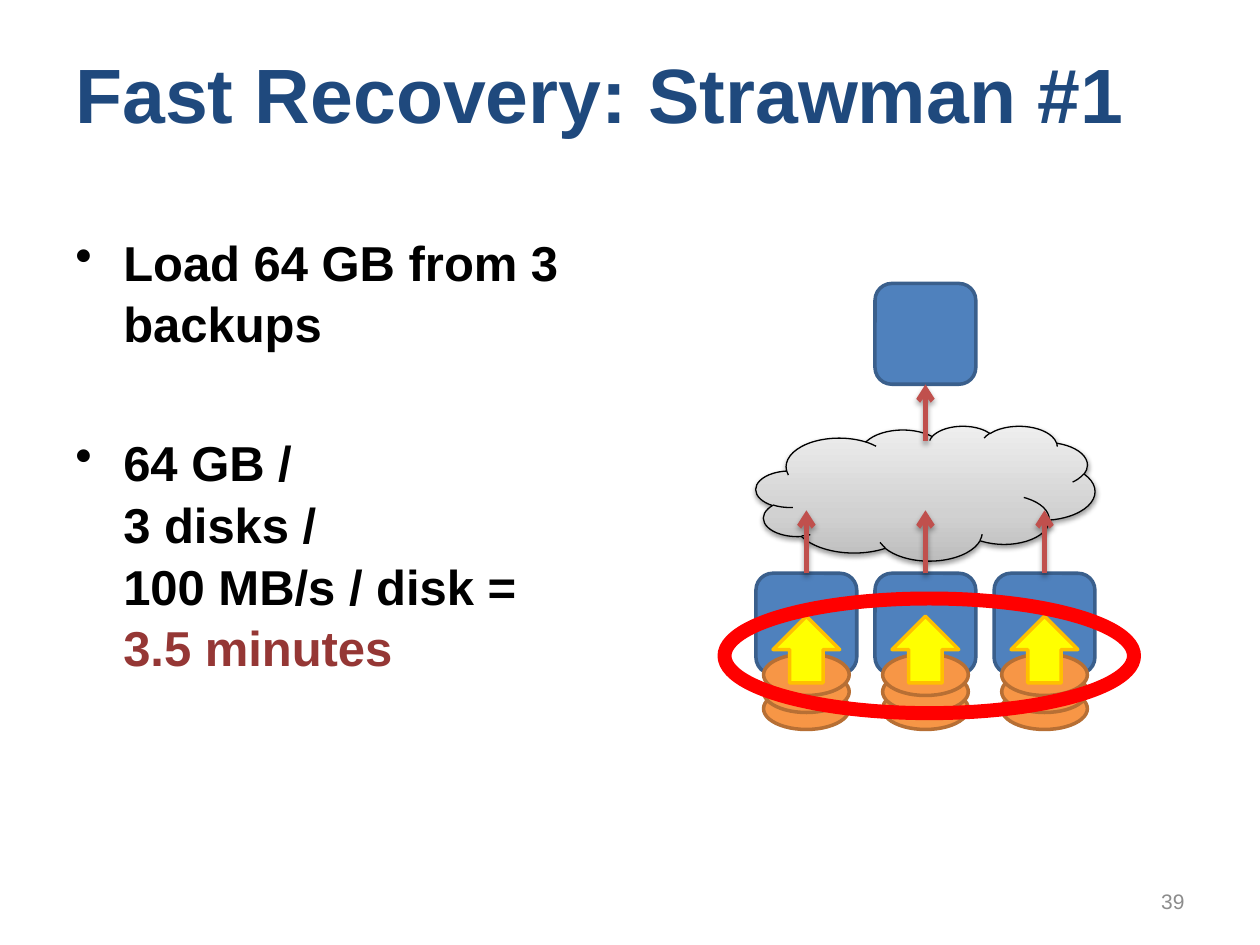
from dataclasses import dataclass
from typing import Optional

from lxml import etree
from pptx import Presentation
from pptx.dml.color import RGBColor
from pptx.enum.shapes import MSO_CONNECTOR, MSO_SHAPE
from pptx.enum.text import MSO_ANCHOR, PP_ALIGN
from pptx.oxml import parse_xml
from pptx.oxml.ns import qn
from pptx.util import Inches, Pt

ROUND_RECT = MSO_SHAPE.ROUNDED_RECTANGLE
OVAL = MSO_SHAPE.OVAL
UP_ARROW = MSO_SHAPE.RIGHT_ARROW
CLOUD = MSO_SHAPE.CLOUD
STRAIGHT = MSO_CONNECTOR.STRAIGHT
MIDDLE = MSO_ANCHOR.MIDDLE
TOP = MSO_ANCHOR.TOP
RIGHT = PP_ALIGN.RIGHT

NAVY = RGBColor(0x1F, 0x49, 0x7D)
BLACK = RGBColor(0, 0, 0)
DARK_RED = RGBColor(0x95, 0x37, 0x35)
GRAY = RGBColor(0x8C, 0x8C, 0x8C)
BLUE = RGBColor(0x4F, 0x81, 0xBD)
BLUE_EDGE = RGBColor(0x3A, 0x5F, 0x8C)
ORANGE = RGBColor(0xF7, 0x96, 0x46)
ORANGE_EDGE = RGBColor(0xB7, 0x6F, 0x34)
YELLOW = RGBColor(0xFF, 0xFF, 0)
GOLD = RGBColor(0xFF, 0xC0, 0)
BRICK = RGBColor(0xC0, 0x50, 0x4D)
RED = RGBColor(0xFF, 0, 0)

A_NS = "http://schemas.openxmlformats.org/drawingml/2006/main"
CLOUD_STOPS = [(0, "BDBDBD"), (35, "D1D1D1"), (100, "EEEEEE")]

CENTERS = [6.4, 7.345, 8.29]
SERVER_TOP = 4.55
DISK_TOPS = [5.46, 5.325, 5.19]


@dataclass
class Style:
    kind: int
    width: float
    height: float
    fill: Optional[RGBColor]
    line: RGBColor
    weight: float
    rotation: float = 0


SERVER = Style(ROUND_RECT, 0.8, 0.8, BLUE, BLUE_EDGE, 2)
DISK = Style(OVAL, 0.68, 0.33, ORANGE, ORANGE_EDGE, 2)
READ_ARROW = Style(UP_ARROW, 0.53, 0.53, YELLOW, GOLD, 2, 270)
HIGHLIGHT = Style(OVAL, 3.25, 0.91, None, RED, 8)
NETWORK = Style(CLOUD, 2.69, 1.07, None, BLACK, 0.75)


def add_styled(s, style: Style, center: float, top: float):
    sp = s.shapes.add_shape(style.kind, Inches(center - style.width / 2), Inches(top),
                            Inches(style.width), Inches(style.height))
    sp.shadow.inherit = False
    sp.rotation = style.rotation
    if style.fill is None:
        sp.fill.background()
    else:
        sp.fill.solid()
        sp.fill.fore_color.rgb = style.fill
    sp.line.color.rgb = style.line
    sp.line.width = Pt(style.weight)
    return sp


def add_shadow(sp, opacity: int, blur: float, dist: float) -> None:
    sp_pr = sp._element.spPr
    for old in sp_pr.findall(qn("a:effectLst")):
        sp_pr.remove(old)
    sp_pr.append(parse_xml(
        f'<a:effectLst xmlns:a="{A_NS}"><a:outerShdw blurRad="{Pt(blur)}" dist="{Pt(dist)}" '
        f'dir="5400000" rotWithShape="0"><a:srgbClr val="000000">'
        f'<a:alpha val="{opacity * 1000}"/></a:srgbClr></a:outerShdw></a:effectLst>'))


def add_network(s, center: float, top: float):
    sp = add_styled(s, NETWORK, center, top)
    stops = "".join(f'<a:gs pos="{pos * 1000}"><a:srgbClr val="{color}"/></a:gs>'
                    for pos, color in CLOUD_STOPS)
    gradient = parse_xml(f'<a:gradFill xmlns:a="{A_NS}" rotWithShape="1"><a:gsLst>{stops}</a:gsLst>'
                         '<a:lin ang="16200000" scaled="0"/></a:gradFill>')
    sp_pr = sp._element.spPr
    sp_pr.replace(sp_pr.find(qn("a:noFill")), gradient)
    add_shadow(sp, 38, 3.1, 1.6)
    return sp


def add_flow(s, x: float, start: float, end: float):
    c = s.shapes.add_connector(STRAIGHT, Inches(x), Inches(start), Inches(x), Inches(end))
    c.line.color.rgb = BRICK
    c.line.width = Pt(3)
    etree.SubElement(c.line._get_or_add_ln(), qn("a:tailEnd"), type="arrow")
    add_shadow(c, 35, 3.1, 1.8)
    return c


def add_text(s, left: float, top: float, width: float, height: float, anchor):
    tf = s.shapes.add_textbox(Inches(left), Inches(top), Inches(width), Inches(height)).text_frame
    tf.word_wrap = True
    tf.vertical_anchor = anchor
    return tf


def set_font(p, size: float, color: RGBColor, bold: bool = False) -> None:
    p.font.name = "Arial"
    p.font.size = Pt(size)
    p.font.bold = bold
    p.font.color.rgb = color


def add_bullet(p, text: str) -> None:
    p.text = text
    p.line_spacing = 1.05
    set_font(p, 28, BLACK, True)
    p_pr = p._p.get_or_add_pPr()
    p_pr.set("marL", str(Inches(0.38)))
    p_pr.set("indent", str(-Inches(0.38)))
    bullet = parse_xml(f'<a:buChar xmlns:a="{A_NS}" char="•"/>')
    p_pr.find(qn("a:defRPr")).addprevious(bullet)


def main() -> None:
    prs = Presentation()
    prs.slide_width = Inches(10)
    prs.slide_height = Inches(7.5)
    s = prs.slides.add_slide(prs.slide_layouts[6])

    p = add_text(s, 0.5, 0.3, 9, 0.87, MIDDLE).paragraphs[0]
    p.text = "Fast Recovery: Strawman #1"
    set_font(p, 44, NAVY, True)

    tf = add_text(s, 0.5, 1.77, 4.42, 4.95, TOP)
    add_bullet(tf.paragraphs[0], "Load 64 GB from 3 backups")
    p = tf.add_paragraph()
    add_bullet(p, "64 GB /\v3 disks /\v100 MB/s / disk =\v")
    p.space_before = Pt(44)
    r = p.add_run()
    r.text = "3.5 minutes"
    r.font.color.rgb = DARK_RED

    servers = [add_styled(s, SERVER, x, SERVER_TOP) for x in CENTERS]
    for x in CENTERS:
        for top in DISK_TOPS:
            add_styled(s, DISK, x, top)
    for x in CENTERS:
        add_styled(s, READ_ARROW, x, 4.89)

    middle = CENTERS[1]
    recovery = add_styled(s, SERVER, middle, 2.25)
    add_network(s, middle, 3.38)
    for x, server in zip(CENTERS, servers):
        add_flow(s, x, SERVER_TOP, 4.05).begin_connect(server, 0)
    add_flow(s, middle, 3.5, 3.05).end_connect(recovery, 2)
    add_styled(s, HIGHLIGHT, 7.375, 4.75)

    p = add_text(s, 7.17, 6.95, 2.33, 0.4, MIDDLE).paragraphs[0]
    p.text = "39"
    p.alignment = RIGHT
    set_font(p, 12, GRAY)

    prs.save("out.pptx")


if __name__ == "__main__":
    main()
